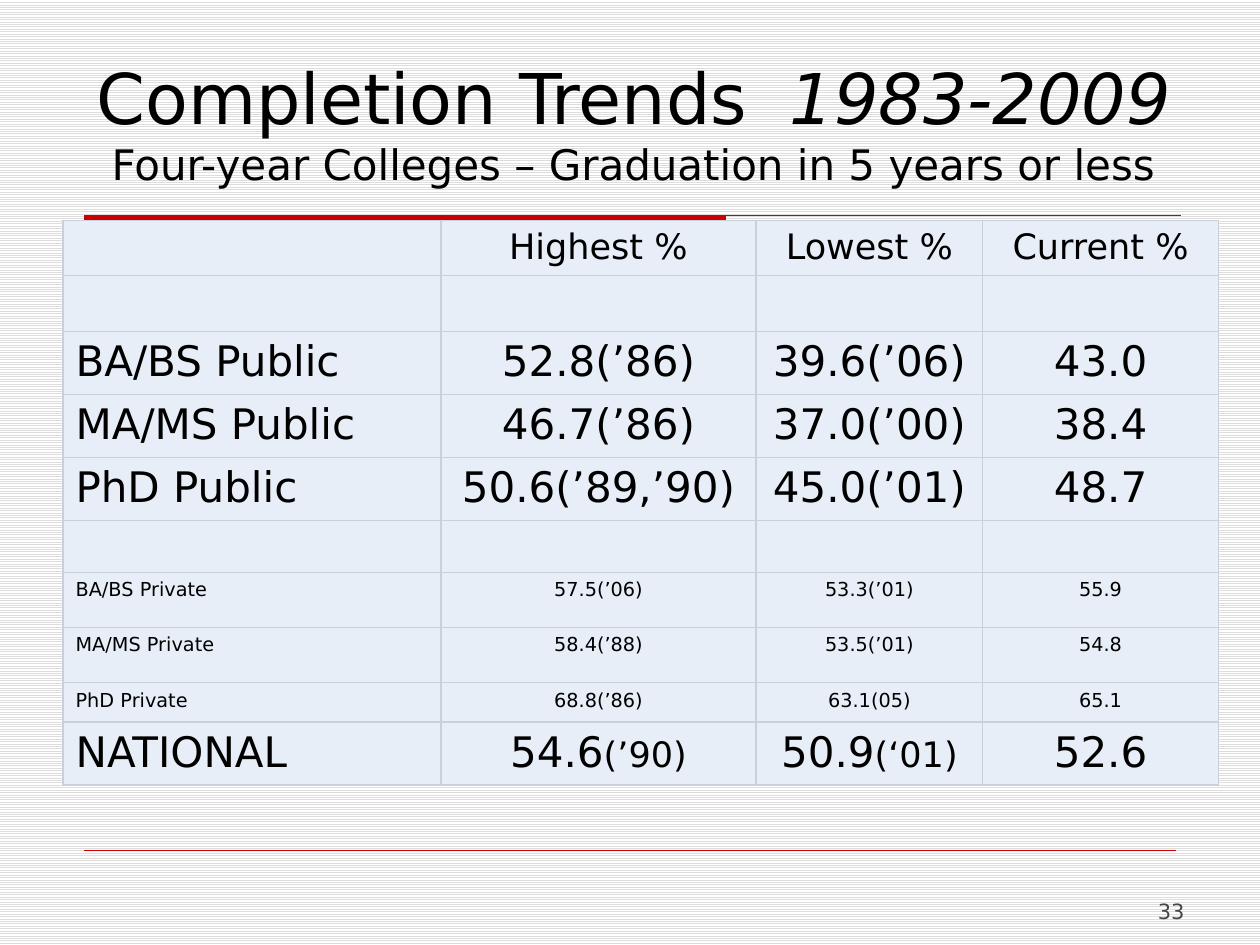
from lxml import etree
from pptx import Presentation
from pptx.dml.color import RGBColor
from pptx.enum.dml import MSO_PATTERN
from pptx.enum.shapes import MSO_CONNECTOR
from pptx.enum.text import MSO_ANCHOR, PP_ALIGN
from pptx.oxml.ns import qn
from pptx.util import Inches, Pt

LIGHT_STRIPES = MSO_PATTERN.LIGHT_HORIZONTAL
STRAIGHT = MSO_CONNECTOR.STRAIGHT
BOTTOM = MSO_ANCHOR.BOTTOM
LEFT, CENTER, RIGHT = PP_ALIGN.LEFT, PP_ALIGN.CENTER, PP_ALIGN.RIGHT

FONT = "DejaVu Sans"
COLORS = {
    "stripe": "DDDDDD",
    "paper": "FFFFFF",
    "accent": "CC0000",
    "text": "000000",
    "number": "454545",
    "cell": "E8EEF8",
    "border": "C9D0D8",
}
COLUMN_WIDTHS = [3, 2.5, 1.8, 1.87]
ROWS = [
    (0.44, 20, ["", "Highest %", "Lowest %", "Current %"]),
    (0.44, 18, [""] * 4),
    (0.49, 24, ["BA/BS Public", "52.8(’86)", "39.6(’06)", "43.0"]),
    (0.49, 24, ["MA/MS Public", "46.7(’86)", "37.0(’00)", "38.4"]),
    (0.49, 24, ["PhD Public", "50.6(’89,’90)", "45.0(’01)", "48.7"]),
    (0.41, 18, [""] * 4),
    (0.44, 11, ["BA/BS Private", "57.5(’06)", "53.3(’01)", "55.9"]),
    (0.44, 11, ["MA/MS Private", "58.4(’88)", "53.5(’01)", "54.8"]),
    (0.31, 11, ["PhD Private", "68.8(’86)", "63.1(05)", "65.1"]),
    (0.49, 24, ["NATIONAL", ("54.6", "(’90)"), ("50.9", "(‘01)"), "52.6"]),
]
YEAR_SIZE = 20


def color(name):
    return RGBColor.from_string(COLORS[name])


def style_font(font, size, color_name="text"):
    font.name = FONT
    font.size = Pt(size)
    font.color.rgb = color(color_name)


def paint_background(slide):
    fill = slide.background.fill
    fill.patterned()
    fill.pattern = LIGHT_STRIPES
    fill.fore_color.rgb = color("stripe")
    fill.back_color.rgb = color("paper")


def add_title_rule(slide):
    left, bar_right, right, top, bottom = map(Inches, (0.67, 5.76, 9.37, 1.71, 1.83))
    outline = slide.shapes.build_freeform(left, top)
    outline.add_line_segments([(bar_right, top), (bar_right, bottom), (left, bottom)])
    outline.move_to(left, top)
    outline.add_line_segments([(right, top)], close=False)
    rule = outline.convert_to_shape()
    rule.shadow.inherit = False
    rule.fill.solid()
    rule.fill.fore_color.rgb = color("accent")
    rule.line.color.rgb = color("accent")
    rule.line.width = Pt(0.75)


def add_footer_rule(slide):
    rule = slide.shapes.add_connector(
        STRAIGHT, Inches(0.67), Inches(6.75), Inches(9.33), Inches(6.75))
    rule.line.color.rgb = color("accent")
    rule.line.width = Pt(0.25)
    etree.SubElement(rule._element.spPr, qn("a:effectLst"))


def add_text_area(slide, box, alignment, right_inset, bottom_inset):
    frame = slide.shapes.add_textbox(*map(Inches, box)).text_frame
    frame.word_wrap = True
    frame.vertical_anchor = BOTTOM
    frame.margin_right = Inches(right_inset)
    frame.margin_bottom = Inches(bottom_inset)
    paragraph = frame.paragraphs[0]
    paragraph.alignment = alignment
    return paragraph


def add_run(paragraph, text, size, italic=False):
    run = paragraph.add_run()
    run.text = text
    style_font(run.font, size)
    run.font.italic = italic


def add_title(slide):
    title = add_text_area(slide, (0.17, 0.3, 9.67, 1.25), CENTER, 0.05, 0.05)
    add_run(title, "Completion Trends\t", 40)
    add_run(title, "1983-2009", 40, italic=True)
    title.add_line_break()
    add_run(title, "Four-year Colleges – Graduation in 5 years or less", 24)


def add_page_number(slide):
    number = add_text_area(slide, (7.17, 6.83, 2.33, 0.5), RIGHT, 0.1, 0)
    number.text = "33"
    style_font(number.font, 12, "number")


def add_borders(cell):
    properties = cell._tc.get_or_add_tcPr()
    for position, side in enumerate(("a:lnL", "a:lnR", "a:lnT", "a:lnB")):
        line = etree.Element(qn(side), w=str(Pt(0.75)))
        fill = etree.SubElement(line, qn("a:solidFill"))
        etree.SubElement(fill, qn("a:srgbClr"), val=COLORS["border"])
        properties.insert(position, line)


def fill_cell(cell, content, size, alignment):
    cell.fill.solid()
    cell.fill.fore_color.rgb = color("cell")
    add_borders(cell)
    paragraph = cell.text_frame.paragraphs[0]
    paragraph.alignment = alignment
    if isinstance(content, tuple):
        rate, year = content
        add_run(paragraph, rate, size)
        add_run(paragraph, year, YEAR_SIZE)
    elif content:
        paragraph.text = content
        style_font(paragraph.font, size)


def add_rates_table(slide):
    height = sum(row[0] for row in ROWS)
    rates = slide.shapes.add_table(
        len(ROWS), len(COLUMN_WIDTHS), Inches(0.5), Inches(1.75),
        Inches(sum(COLUMN_WIDTHS)), Inches(height)).table
    rates.first_row = False
    rates.horz_banding = False
    for column, width in zip(rates.columns, COLUMN_WIDTHS):
        column.width = Inches(width)
    for row, (row_height, size, contents) in zip(rates.rows, ROWS):
        row.height = Inches(row_height)
        for index, content in enumerate(contents):
            fill_cell(row.cells[index], content, size, CENTER if index else LEFT)


def main():
    presentation = Presentation()
    presentation.slide_width = Inches(10)
    presentation.slide_height = Inches(7.5)
    slide = presentation.slides.add_slide(presentation.slide_layouts[6])
    paint_background(slide)
    add_title_rule(slide)
    add_footer_rule(slide)
    add_page_number(slide)
    add_title(slide)
    add_rates_table(slide)
    presentation.save("out.pptx")


if __name__ == "__main__":
    main()
